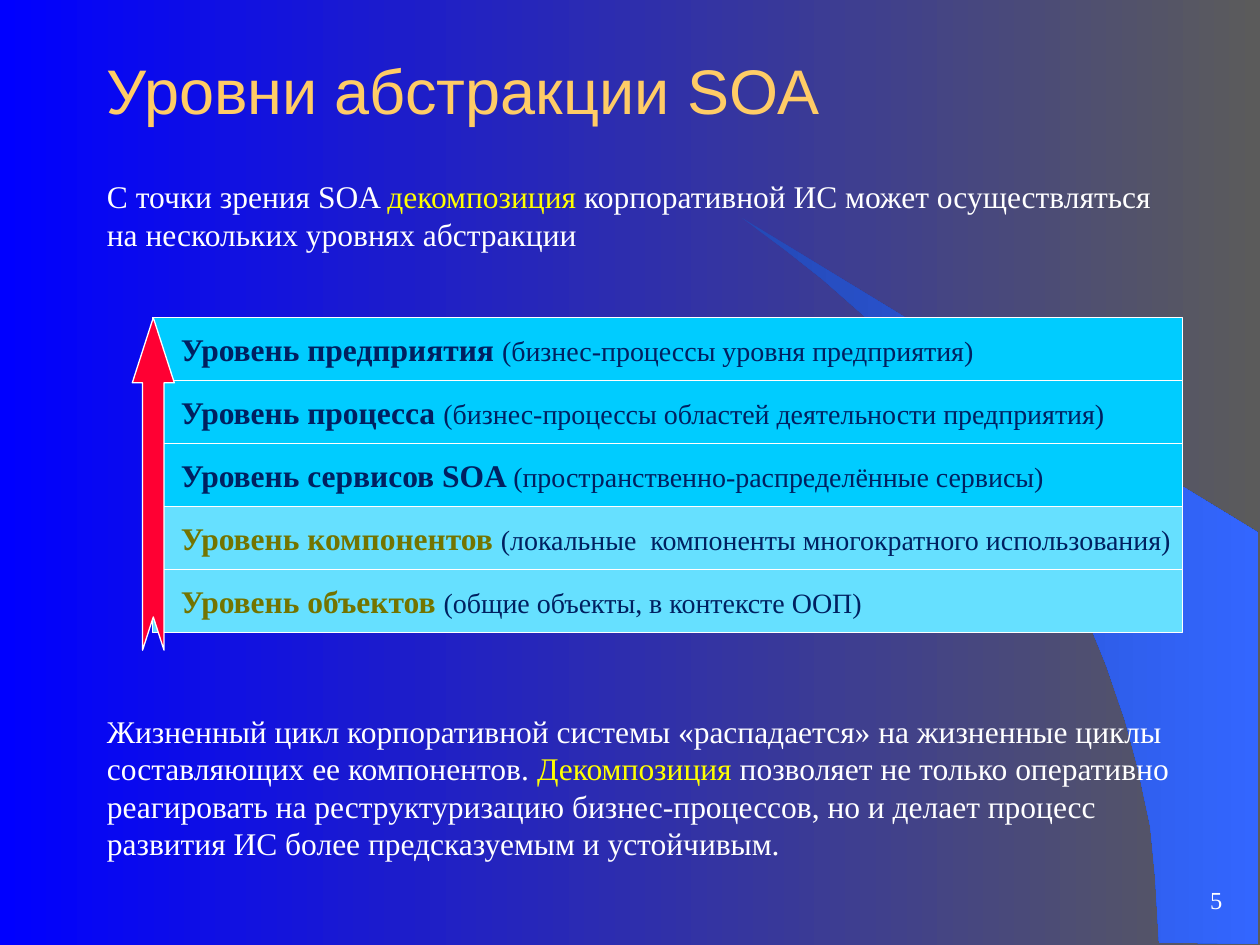
from pptx import Presentation
from pptx.dml import color
from pptx.enum import shapes, text
from pptx.util import Pt

SERIF = "Times New Roman"
WHITE, YELLOW, NAVY, OLIVE = "FFFFFF", "FFFF00", "002060", "737400"
CYAN, PALE_CYAN = "00CCFF", "66E0FF"

LEVELS = [
    ("Уровень предприятия ", "(бизнес-процессы уровня предприятия)", CYAN, NAVY),
    ("Уровень процесса ", "(бизнес-процессы областей деятельности предприятия)", CYAN, NAVY),
    ("Уровень сервисов SOA ", "(пространственно-распределённые сервисы)", CYAN, NAVY),
    ("Уровень компонентов ", "(локальные  компоненты многократного использования)",
     PALE_CYAN, OLIVE),
    ("Уровень объектов ", "(общие объекты, в контексте ООП)", PALE_CYAN, OLIVE),
]
INTRO = [
    ("С точки зрения SOA ", WHITE),
    ("декомпозиция", YELLOW),
    (" корпоративной ИС может осуществляться на нескольких уровнях абстракции", WHITE),
]
SUMMARY = [
    ("Жизненный цикл корпоративной системы «распадается» на жизненные циклы "
     "составляющих ее компонентов. ", WHITE),
    ("Декомпозиция", YELLOW),
    (" позволяет не только оперативно реагировать на реструктуризацию "
     "бизнес-процессов, но и делает процесс развития ИС более предсказуемым "
     "и устойчивым.", WHITE),
]
# Outline of the curved swoosh, in points
SWOOSH = [
    (662.4, 538.6), (719.3, 539.3), (719.3, 304.6), (424.1, 124.6), (449.3, 143.3),
    (470.2, 159.8), (493.2, 180), (515.5, 201.6), (548.6, 237.6), (578.2, 276.5),
    (599, 310.3), (617.8, 344.9), (632.2, 380.2), (643, 411.8), (650.2, 438.5),
    (657.4, 472.3), (660.2, 501.1),
]


def rgb(value):
    return color.RGBColor.from_string(value)


def fill_gradient(fill, start, end):
    """Fill from left to right."""
    fill.gradient()
    fill.gradient_angle = 0
    for stop, value in zip(fill.gradient_stops, (start, end)):
        stop.color.rgb = rgb(value)


def style_shape(shape, fill):
    shape.shadow.inherit = False
    shape.fill.solid()
    shape.fill.fore_color.rgb = rgb(fill)
    shape.line.color.rgb = rgb(WHITE)
    shape.line.width = Pt(0.75)


def add_span(para, words, size=18, tint=WHITE, font=SERIF, bold=False):
    span = para.add_run()
    span.text = words
    span.font.size = Pt(size)
    span.font.name = font
    span.font.bold = bold
    span.font.color.rgb = rgb(tint)


def add_text_box(page, box, anchor=text.MSO_ANCHOR.TOP, align=text.PP_ALIGN.LEFT, margin=3.6):
    """Add an empty text box and return its first paragraph."""
    frame = page.shapes.add_textbox(*map(Pt, box)).text_frame
    frame.word_wrap = True
    frame.vertical_anchor = anchor
    frame.margin_top = frame.margin_bottom = Pt(margin)
    para = frame.paragraphs[0]
    para.alignment = align
    return para


def add_backdrop(page):
    fill_gradient(page.background.fill, "0000FF", "5B5B5B")
    builder = page.shapes.build_freeform(*map(Pt, SWOOSH[0]))
    builder.add_line_segments([(Pt(x), Pt(y)) for x, y in SWOOSH[1:]])
    swoosh = builder.convert_to_shape()
    swoosh.shadow.inherit = False
    swoosh.line.fill.background()
    fill_gradient(swoosh.fill, "2449B6", "3366FF")


def add_title(page, box):
    para = add_text_box(page, box, anchor=text.MSO_ANCHOR.MIDDLE)
    add_span(para, "Уровни абстракции SOA", size=36, tint="FFCC66", font="Arial")


def add_page_number(page, box):
    para = add_text_box(page, box, anchor=text.MSO_ANCHOR.BOTTOM,
                        align=text.PP_ALIGN.RIGHT, margin=0)
    add_span(para, "5", size=14)


def add_statement(page, box, spans):
    para = add_text_box(page, box)
    para.line_spacing = Pt(21.5)
    for words, tint in spans:
        add_span(para, words, tint=tint)


def add_levels(page, box):
    """Stack the levels in the box and run an upward arrow along its left edge."""
    left, top, width, height = box
    row_height = height / len(LEVELS)
    for index, (name, detail, fill, tint) in enumerate(LEVELS):
        row = page.shapes.add_shape(
            shapes.MSO_SHAPE.RECTANGLE, Pt(left), Pt(top + index * row_height),
            Pt(width), Pt(row_height))
        style_shape(row, fill)
        frame = row.text_frame
        frame.word_wrap = True
        frame.vertical_anchor = text.MSO_ANCHOR.MIDDLE
        frame.margin_left, frame.margin_right = Pt(16.2), Pt(0)
        para = frame.paragraphs[0]
        para.alignment = text.PP_ALIGN.LEFT
        add_span(para, name, tint=tint, bold=True)
        add_span(para, detail, size=16, tint=NAVY)

    length, thickness = height + 10, 24
    arrow = page.shapes.add_shape(
        shapes.MSO_SHAPE.NOTCHED_RIGHT_ARROW, Pt(left + 0.5 - length / 2),
        Pt(top + (length - thickness) / 2), Pt(length), Pt(thickness))
    arrow.rotation = 270
    arrow.adjustments[0], arrow.adjustments[1] = 0.51, 1.55
    style_shape(arrow, "FF0033")


def main():
    deck = Presentation()
    deck.slide_width, deck.slide_height = Pt(720), Pt(540)
    page = deck.slides.add_slide(deck.slide_layouts[6])
    add_backdrop(page)
    add_title(page, (54, 24, 636, 54))
    add_page_number(page, (662.4, 494.6, 43.2, 28))
    add_statement(page, (54, 98, 624, 50.4), INTRO)
    add_levels(page, (87.1, 181.5, 588.5, 180))
    add_statement(page, (54, 403.2, 630, 94.3), SUMMARY)
    deck.save("out.pptx")


if __name__ == "__main__":
    main()
